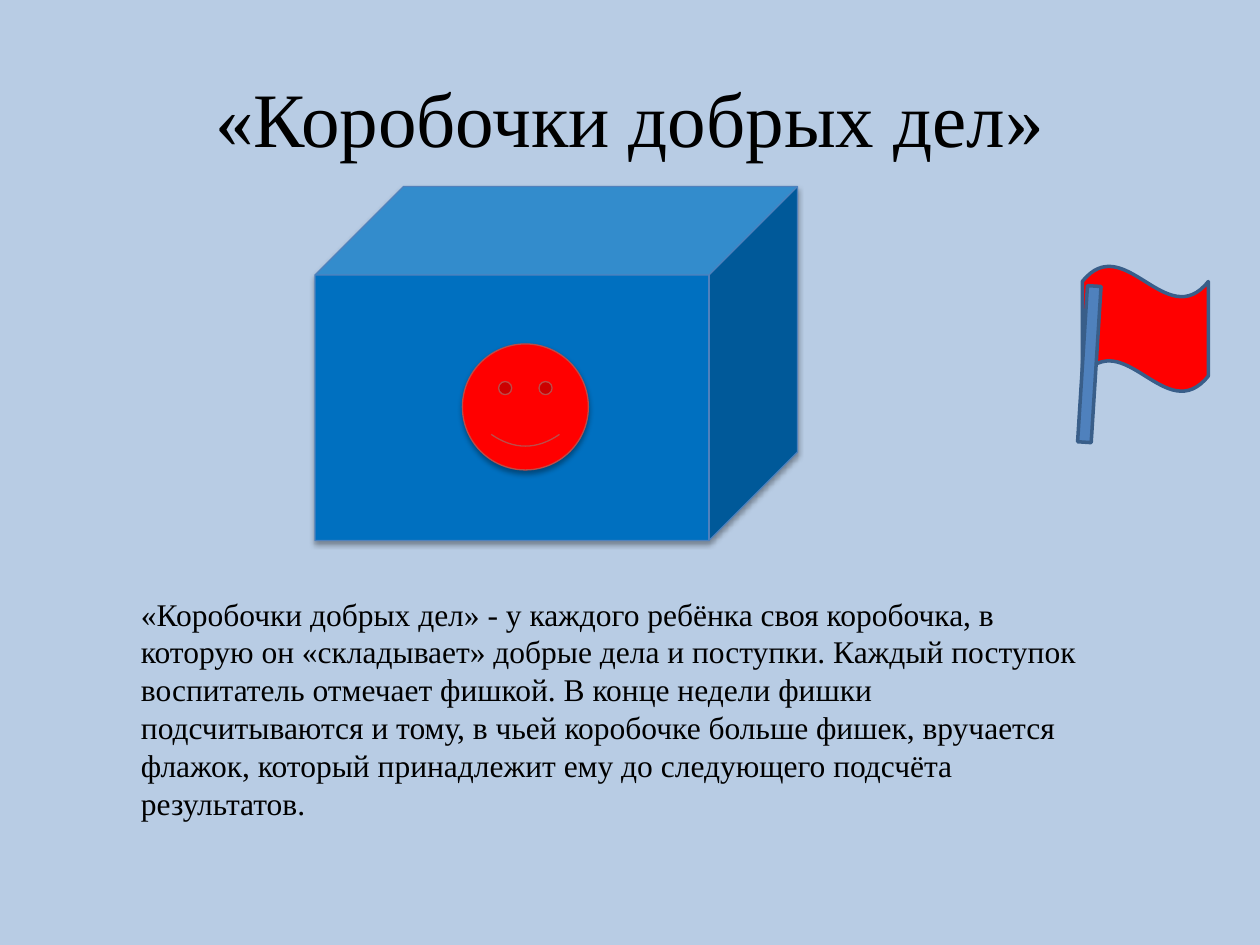
import pptx
import pptx.dml.color
import pptx.enum.shapes
import pptx.enum.text
import pptx.oxml
import pptx.oxml.ns
import pptx.util

SHAPES = pptx.enum.shapes.MSO_SHAPE
ALIGN = pptx.enum.text.PP_ALIGN
ANCHOR = pptx.enum.text.MSO_ANCHOR


def colour(value):
    return pptx.dml.color.RGBColor.from_string(value)


def apply(target, formats):
    for name, value in formats.items():
        setattr(target, name, value)


class Slide:
    COLUMNS, ROWS = 100, 75
    FONT, INK, BACKGROUND = "Times New Roman", "000000", "B8CCE4"

    def __init__(self, deck):
        self.cell_width = deck.slide_width / self.COLUMNS
        self.cell_height = deck.slide_height / self.ROWS
        self.slide = deck.slides.add_slide(deck.slide_layouts[5])
        self.paint(self.slide.background.fill, self.BACKGROUND)

    def paint(self, fill, value):
        fill.solid()
        fill.fore_color.rgb = colour(value)

    def place(self, column, row, columns, rows):
        return {
            "left": round(column * self.cell_width),
            "top": round(row * self.cell_height),
            "width": round(columns * self.cell_width),
            "height": round(rows * self.cell_height),
        }

    def set_words(self, frame, words, size, align, anchor):
        apply(frame, {
            "word_wrap": True,
            "auto_size": pptx.enum.text.MSO_AUTO_SIZE.NONE,
            "vertical_anchor": anchor,
        })
        paragraph = frame.paragraphs[0]
        paragraph.alignment = align
        run = paragraph.add_run()
        run.text = words
        apply(run.font, {"name": self.FONT, "size": pptx.util.Pt(size)})
        run.font.color.rgb = colour(self.INK)

    def title(self, words, area, size):
        heading = self.slide.shapes.title
        apply(heading, self.place(*area))
        self.set_words(heading.text_frame, words, size, ALIGN.CENTER, ANCHOR.MIDDLE)

    def text(self, words, area, size):
        box = self.slide.shapes.add_textbox(**self.place(*area))
        self.set_words(box.text_frame, words, size, ALIGN.LEFT, ANCHOR.TOP)

    def shape(self, kind, area, fill, line, weight, adjustments, rotation=0, shadow=False):
        figure = self.slide.shapes.add_shape(kind, **self.place(*area))
        figure.rotation = rotation
        for index, value in enumerate(adjustments):
            figure.adjustments[index] = value
        self.paint(figure.fill, fill)
        figure.line.color.rgb = colour(line)
        figure.line.width = pptx.util.Pt(weight)
        figure.shadow.inherit = False
        if shadow:
            self.cast_shadow(figure)

    def cast_shadow(self, figure, blur=3.1, distance=1.8, opacity=35):
        effects = figure._element.spPr.find(pptx.oxml.ns.qn("a:effectLst"))
        effects.append(pptx.oxml.parse_xml(
            f'<a:outerShdw {pptx.oxml.ns.nsdecls("a")} blurRad="{pptx.util.Pt(blur)}" '
            f'dist="{pptx.util.Pt(distance)}" dir="5400000" rotWithShape="0">'
            f'<a:srgbClr val="000000"><a:alpha val="{opacity * 1000}"/></a:srgbClr>'
            '</a:outerShdw>'
        ))


def main():
    deck = pptx.Presentation()
    deck.slide_width = pptx.util.Inches(10)
    deck.slide_height = pptx.util.Inches(7.5)

    page = Slide(deck)
    page.title("«Коробочки добрых дел»", (5, 3, 90, 12.5), 44)
    page.text(
        "«Коробочки добрых дел» - у каждого ребёнка своя коробочка, в которую он "
        "«складывает» добрые дела и поступки. Каждый поступок воспитатель отмечает "
        "фишкой. В конце недели фишки подсчитываются и тому, в чьей коробочке больше "
        "фишек, вручается флажок, который принадлежит ему до следующего подсчёта "
        "результатов.",
        (10.2, 46.7, 78.1, 19.2), 18,
    )
    page.shape(SHAPES.CUBE, (25, 14.8, 38.3, 28.1), "0070C0", "4F81BD", 0.75,
               [0.25], shadow=True)
    page.shape(SHAPES.SMILEY_FACE, (36.7, 27.3, 10, 10), "FF0000", "BD4B48", 0.75,
               [0.047], shadow=True)
    page.shape(SHAPES.WAVE, (85.9, 21.1, 10, 10), "FF0000", "395E89", 2, [0.125, 0])
    page.shape(SHAPES.MATH_MINUS, (78, 26.6, 16.9, 4.6), "4F81BD", "395E89", 2,
               [0.235], rotation=93.6)

    deck.save("out.pptx")


if __name__ == "__main__":
    main()
